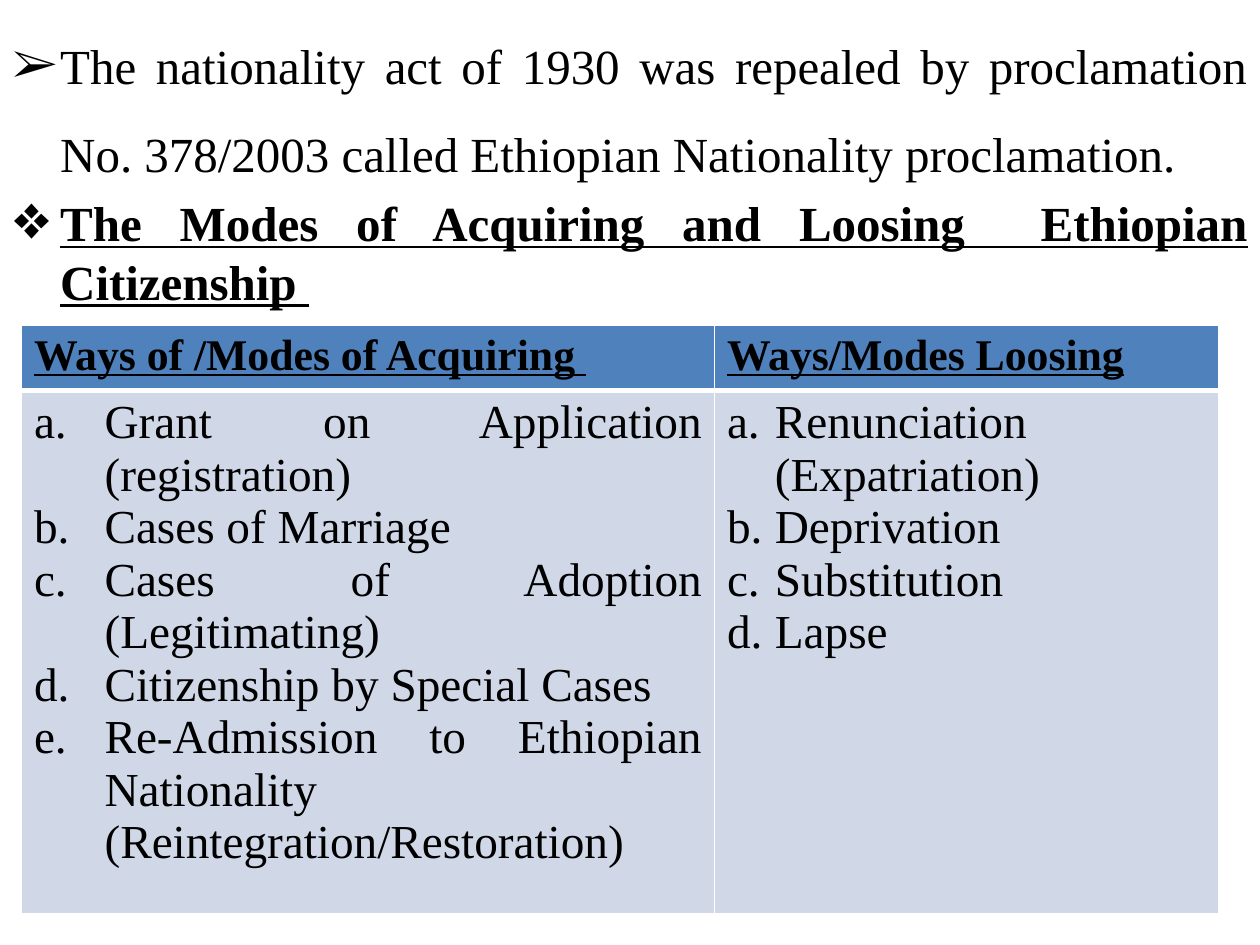
from dataclasses import dataclass

import pptx
import pptx.dml.color
import pptx.enum.text
import pptx.oxml
import pptx.oxml.ns
import pptx.util
from lxml import etree
from pptx.util import Inches


@dataclass(frozen=True)
class Theme:
    font: str = "Times New Roman"
    ink: str = "000000"
    header_fill: str = "4F81BD"
    body_fill: str = "D0D8E8"
    border: str = "FFFFFF"
    intro_size: int = 28
    header_size: int = 25
    list_size: int = 27


THEME = Theme()
JUSTIFY = pptx.enum.text.PP_ALIGN.JUSTIFY
LEFT = pptx.enum.text.PP_ALIGN.LEFT


def write(paragraph, text, size, strong=False, align=LEFT, indent=0, marker=None):
    """Add one run; marker is a bullet character, or "auto" for a., b., c."""
    paragraph.alignment = align
    run = paragraph.add_run()
    run.text = text
    run.font.name = THEME.font
    run.font.size = pptx.util.Pt(size)
    run.font.bold = run.font.underline = strong
    run.font.color.rgb = pptx.dml.color.RGBColor.from_string(THEME.ink)
    if marker:
        properties = paragraph._p.get_or_add_pPr()
        properties.set("marL", str(Inches(indent)))
        properties.set("indent", str(-Inches(indent)))
        bullet_font = etree.SubElement(properties, pptx.oxml.ns.qn("a:buFont"))
        bullet_font.set("typeface", THEME.font)
        if marker == "auto":
            tag, attribute, value = "a:buAutoNum", "type", "alphaLcPeriod"
        else:
            tag, attribute, value = "a:buChar", "char", marker
        etree.SubElement(properties, pptx.oxml.ns.qn(tag)).set(attribute, value)


def style_cell(cell, fill, top, bottom):
    """Fill a cell and draw its borders, with top and bottom widths in points."""
    cell.fill.solid()
    cell.fill.fore_color.rgb = pptx.dml.color.RGBColor.from_string(fill)
    properties = cell._tc.get_or_add_tcPr()
    for position, (side, width) in enumerate(
        [("L", 1), ("R", 1), ("T", top), ("B", bottom)]
    ):
        properties.insert(position, pptx.oxml.parse_xml(
            f'<a:ln{side} {pptx.oxml.ns.nsdecls("a")} w="{pptx.util.Pt(width)}">'
            f'<a:solidFill><a:srgbClr val="{THEME.border}"/></a:solidFill></a:ln{side}>'
        ))


presentation = pptx.Presentation()
presentation.slide_width = Inches(10)
presentation.slide_height = Inches(7.5)
slide = presentation.slides.add_slide(presentation.slide_layouts[6])

# Introductory points
intro = slide.shapes.add_textbox(0, 0, Inches(10), Inches(7.5)).text_frame
intro.word_wrap = True
points = [
    ("➢", "The nationality act of 1930 was repealed by proclamation No. 378/2003 "
          "called Ethiopian Nationality proclamation.", False, 1.5),
    ("❖", "The Modes of Acquiring and Loosing  Ethiopian Citizenship ", True, 1.0),
]
for number, (marker, text, strong, spacing) in enumerate(points):
    point = intro.add_paragraph() if number else intro.paragraphs[0]
    point.line_spacing = spacing
    point.space_before = pptx.util.Pt(0.2 * THEME.intro_size)
    write(point, text, THEME.intro_size, strong, JUSTIFY, 0.38, marker)

# Ways of acquiring and losing citizenship
modes = [
    ("Ways of /Modes of Acquiring ", 5.5, JUSTIFY, 0.56, [
        "Grant on Application (registration)",
        "Cases of Marriage ",
        "Cases of Adoption (Legitimating)",
        "Citizenship by Special Cases ",
        "Re-Admission to Ethiopian Nationality (Reintegration/Restoration)",
    ]),
    ("Ways/Modes Loosing", 4, LEFT, 0.38, [
        "Renunciation (Expatriation)", "Deprivation", "Substitution", "Lapse",
    ]),
]
modes_frame = slide.shapes.add_table(
    2, len(modes), Inches(0.17), Inches(2.58), Inches(9.5), Inches(4.67)
)
table = modes_frame.table
table.rows[0].height = Inches(0.45)
table.rows[1].height = Inches(2.24)
modes_frame.height = Inches(4.67)

for column, (heading, width, align, indent, ways) in enumerate(modes):
    table.columns[column].width = Inches(width)
    header, body = table.cell(0, column), table.cell(1, column)
    style_cell(header, THEME.header_fill, top=1, bottom=3)
    style_cell(body, THEME.body_fill, top=3, bottom=1)
    write(header.text_frame.paragraphs[0], heading, THEME.header_size, strong=True)
    for number, way in enumerate(ways):
        frame = body.text_frame
        entry = frame.add_paragraph() if number else frame.paragraphs[0]
        write(entry, way, THEME.list_size, False, align, indent, "auto")

presentation.save("out.pptx")
